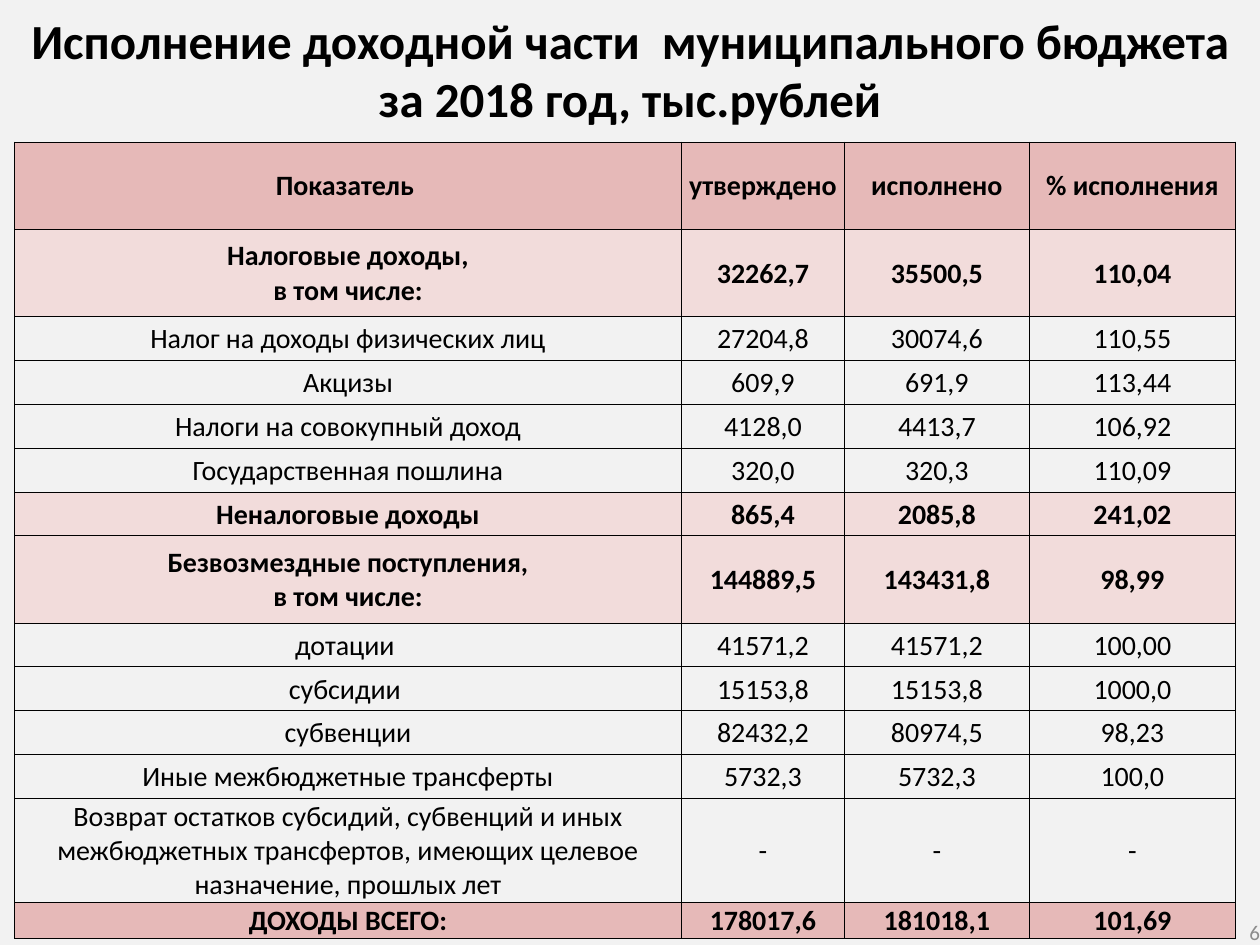
import dataclasses

import lxml.etree
import pptx
import pptx.dml.color
import pptx.enum.text
import pptx.oxml.ns
import pptx.util

Pt = pptx.util.Pt
RGBColor = pptx.dml.color.RGBColor
ALIGN = pptx.enum.text.PP_ALIGN
ANCHOR = pptx.enum.text.MSO_ANCHOR


@dataclasses.dataclass(frozen=True)
class Theme:
    font: str = "Calibri"
    background: str = "F2F2F2"
    text: str = "000000"
    muted: str = "8C8C8C"
    border: str = "000000"
    total_fill: str = "E6B9B8"
    group_fill: str = "F2DCDB"
    title_size: float = 28
    table_size: float = 16
    number_size: float = 12
    border_width: float = 0.5


@dataclasses.dataclass(frozen=True)
class Box:
    left: float
    top: float
    width: float
    height: float


THEME = Theme()
FILLS = {"total": THEME.total_fill, "group": THEME.group_fill, "item": None}
TALL, NORMAL, WRAPPED, LOW = 49.8, 25.1, 58.2, 19.6
COLUMN_SHARES = (381, 93, 105.7, 117.7)

TITLE_LINES = (
    "Исполнение доходной части  муниципального бюджета",
    "за 2018 год, тыс.рублей",
)
BUDGET_ROWS = (
    ("total", TALL, "Показатель ", "утверждено", "исполнено", "% исполнения"),
    ("group", TALL, "Налоговые доходы,\nв том числе:", "32262,7", "35500,5", "110,04"),
    ("item", NORMAL, "Налог на доходы физических лиц", "27204,8", "30074,6", "110,55"),
    ("item", NORMAL, "Акцизы", "609,9", "691,9", "113,44"),
    ("item", NORMAL, "Налоги на совокупный доход", "4128,0", "4413,7", "106,92"),
    ("item", NORMAL, "Государственная пошлина", "320,0", "320,3", "110,09"),
    ("group", NORMAL, "Неналоговые доходы", "865,4", "2085,8", "241,02"),
    ("group", TALL, "Безвозмездные поступления,\nв том числе:",
     "144889,5", "143431,8", "98,99"),
    ("item", NORMAL, "дотации ", "41571,2", "41571,2", "100,00"),
    ("item", NORMAL, "субсидии ", "15153,8", "15153,8", "1000,0"),
    ("item", NORMAL, "субвенции", "82432,2", "80974,5", "98,23"),
    ("item", NORMAL, "Иные межбюджетные трансферты", "5732,3", "5732,3", "100,0"),
    ("item", WRAPPED, "Возврат остатков субсидий, субвенций и иных межбюджетных "
     "трансфертов, имеющих целевое назначение, прошлых лет", "-", "-", "-"),
    ("total", LOW, "ДОХОДЫ ВСЕГО:", "178017,6", "181018,1", "101,69"),
)


def format_paragraph(paragraph, text, size, color, bold, alignment):
    paragraph.text = text
    paragraph.alignment = alignment
    paragraph.font.name = THEME.font
    paragraph.font.size = Pt(size)
    paragraph.font.bold = bold
    paragraph.font.color.rgb = RGBColor.from_string(color)


def set_margins(target, left, top, right, bottom):
    target.margin_left, target.margin_top = Pt(left), Pt(top)
    target.margin_right, target.margin_bottom = Pt(right), Pt(bottom)


def draw_borders(cell):
    properties = cell._tc.get_or_add_tcPr()
    qn = pptx.oxml.ns.qn
    for side in ("a:lnL", "a:lnR", "a:lnT", "a:lnB"):
        line = lxml.etree.SubElement(properties, qn(side), w=str(Pt(THEME.border_width)))
        fill = lxml.etree.SubElement(line, qn("a:solidFill"))
        lxml.etree.SubElement(fill, qn("a:srgbClr"), val=THEME.border)


def place_title(slide, box):
    title = slide.shapes.title
    title.left, title.top = Pt(box.left), Pt(box.top)
    title.width, title.height = Pt(box.width), Pt(box.height)
    frame = title.text_frame
    frame.word_wrap = True
    frame.auto_size = pptx.enum.text.MSO_AUTO_SIZE.NONE
    frame.vertical_anchor = ANCHOR.TOP
    set_margins(frame, 7.2, 5.76, 7.2, 3.6)
    frame.text = "\n".join(TITLE_LINES)
    for paragraph, line in zip(frame.paragraphs, TITLE_LINES):
        format_paragraph(paragraph, line, THEME.title_size, THEME.text, True, ALIGN.CENTER)


def fill_cell(cell, text, kind):
    cell.vertical_anchor = ANCHOR.MIDDLE
    set_margins(cell, 0.72, 0.72, 0.72, 0)
    draw_borders(cell)
    if FILLS[kind]:
        cell.fill.solid()
        cell.fill.fore_color.rgb = RGBColor.from_string(FILLS[kind])
    else:
        cell.fill.background()
    format_paragraph(cell.text_frame.paragraphs[0], text, THEME.table_size,
                     THEME.text, kind != "item", ALIGN.CENTER)


def place_budget_table(slide, box):
    table = slide.shapes.add_table(
        len(BUDGET_ROWS), len(COLUMN_SHARES),
        Pt(box.left), Pt(box.top), Pt(box.width), Pt(box.height)).table
    table.first_row = False
    table.horz_banding = False
    for column, share in zip(table.columns, COLUMN_SHARES):
        column.width = Pt(box.width * share / sum(COLUMN_SHARES))
    for row, (kind, height, *texts) in zip(table.rows, BUDGET_ROWS):
        row.height = Pt(height)
        for cell, text in zip(row.cells, texts):
            fill_cell(cell, text, kind)


def place_slide_number(slide, box, number):
    frame = slide.shapes.add_textbox(
        Pt(box.left), Pt(box.top), Pt(box.width), Pt(box.height)).text_frame
    frame.word_wrap = True
    frame.vertical_anchor = ANCHOR.MIDDLE
    set_margins(frame, 0, 0, 0, 0)
    format_paragraph(frame.paragraphs[0], number, THEME.number_size,
                     THEME.muted, False, ALIGN.RIGHT)


def main():
    presentation = pptx.Presentation()
    presentation.slide_width, presentation.slide_height = Pt(720), Pt(540)
    slide = presentation.slides.add_slide(
        presentation.slide_layouts.get_by_name("Title Only"))
    slide.background.fill.solid()
    slide.background.fill.fore_color.rgb = RGBColor.from_string(THEME.background)
    place_title(slide, Box(0, 0, 720, 77))
    place_budget_table(slide, Box(8.3, 81.2, 697.7, 453.6))
    place_slide_number(slide, Box(552, 525, 168, 15), "6")
    presentation.save("out.pptx")


if __name__ == "__main__":
    main()
